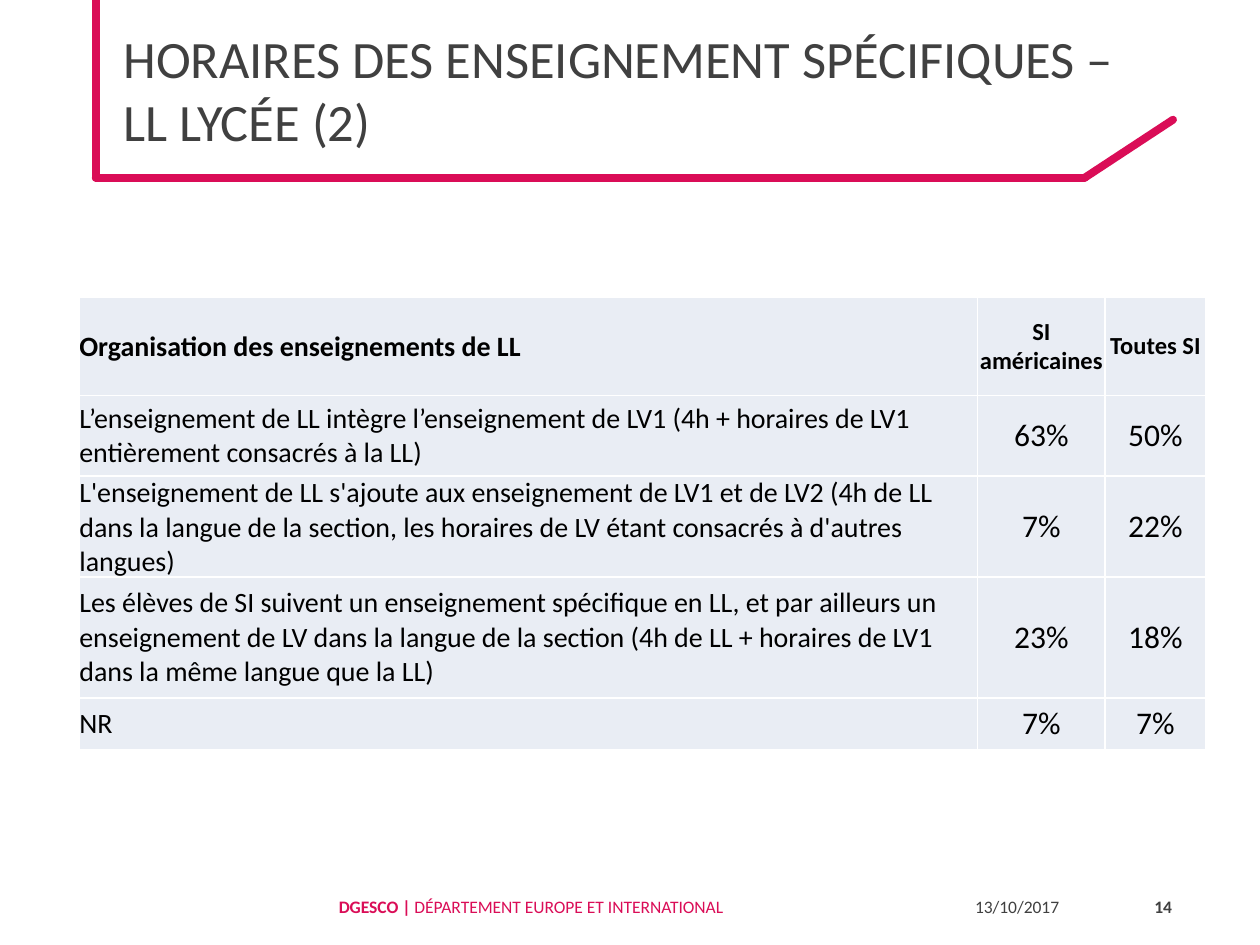
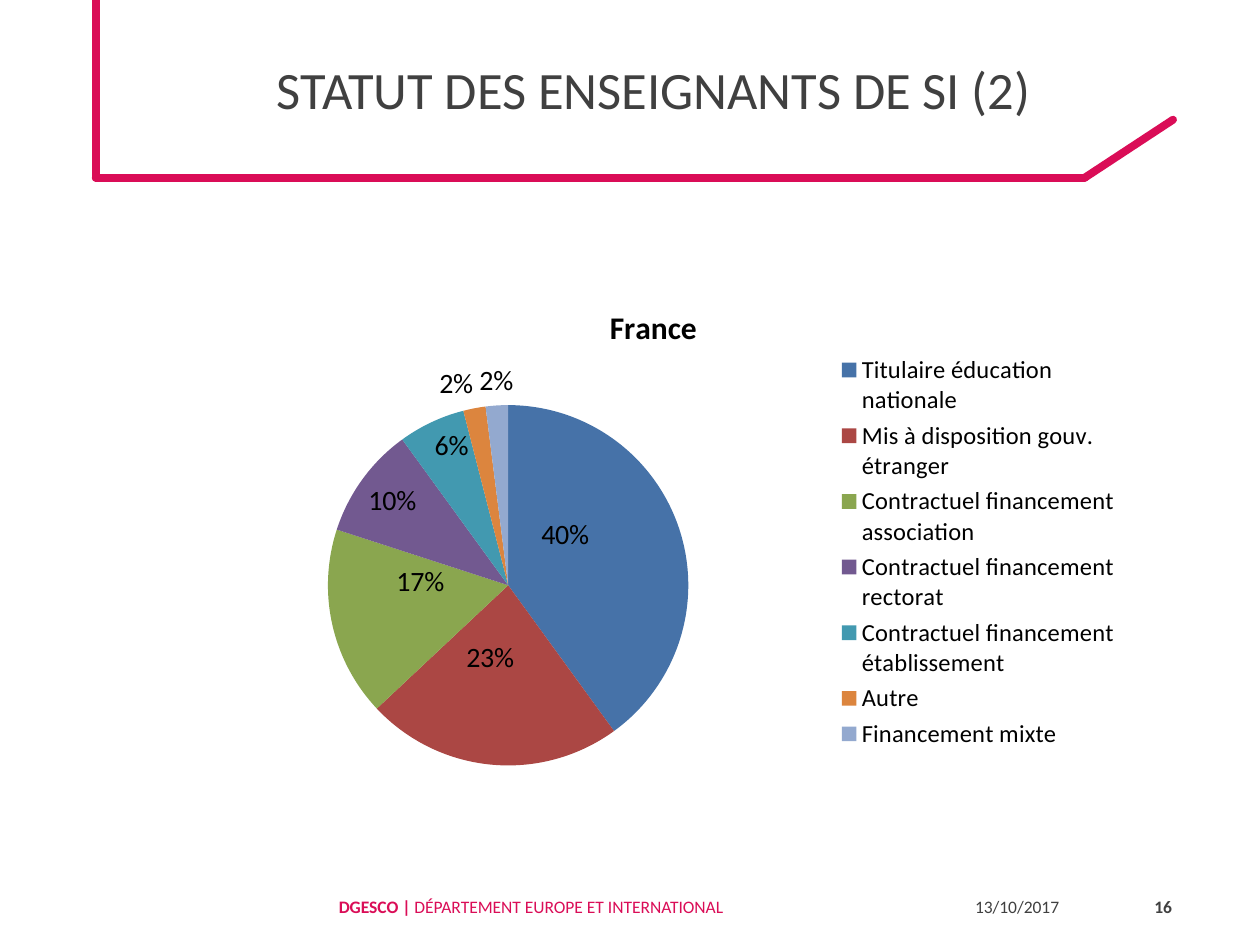
from dataclasses import dataclass

from lxml.etree import SubElement
from pptx import Presentation
from pptx.chart.data import CategoryChartData
from pptx.dml.color import RGBColor
from pptx.enum.chart import XL_CHART_TYPE as ChartType
from pptx.enum.chart import XL_LABEL_POSITION as LabelPosition
from pptx.enum.chart import XL_LEGEND_POSITION as LegendPosition
from pptx.enum.shapes import MSO_CONNECTOR as Connector
from pptx.enum.text import MSO_ANCHOR as Anchor
from pptx.enum.text import PP_ALIGN as Align
from pptx.oxml.ns import qn
from pptx.util import Inches, Pt


@dataclass(frozen=True)
class Theme:
    """Colours, font and type sizes shared by the slides."""

    font: str = "Calibri"
    accent: str = "DA0D57"
    grey: str = "404040"
    black: str = "000000"
    white: str = "FFFFFF"
    cell: str = "E9EDF4"
    slices: tuple = ("4672A8", "AB4744", "8AA64F", "725990", "4299B0", "DC853E", "93A9CF")
    title_size: int = 30
    large_size: int = 18
    text_size: int = 16
    small_size: int = 14
    footer_size: int = 10


THEME = Theme()
TITLE_BOX = (0.88, 0, 8.62, 1.41)
FOOTER_BOX = (2.59, 6.99, 6.81, 0.4)
TABLE_BOX = (0.63, 2.36, 8.94, 3.43)
CHART_BOX = (1.37, 2.16, 7.61, 4.4)
DATE = "13/10/2017"

COLUMN_WIDTHS = (7.13, 1.01, 0.8)
ROW_HEIGHTS = (0.78, 0.64, 0.64, 0.96, 0.41)
TEACHING_ROWS = (
    ("Organisation des enseignements de LL", "SI américaines", "Toutes SI"),
    ("L’enseignement de LL intègre l’enseignement de LV1 (4h + horaires de LV1 "
     "entièrement consacrés à la LL)", "63%", "50%"),
    ("L'enseignement de LL s'ajoute aux enseignement de LV1 et de LV2 (4h de LL dans la "
     "langue de la section, les horaires de LV étant consacrés à d'autres langues)",
     "7%", "22%"),
    ("Les élèves de SI suivent un enseignement spécifique en LL, et par ailleurs un "
     "enseignement de LV dans la langue de la section (4h de LL + horaires de LV1 dans "
     "la même langue que la LL)", "23%", "18%"),
    ("NR", "7%", "7%"),
)
TEACHER_STATUS = {
    "Titulaire éducation nationale": 40,
    "Mis à disposition gouv. étranger": 23,
    "Contractuel financement association": 17,
    "Contractuel financement rectorat": 10,
    "Contractuel financement établissement": 6,
    "Autre": 2,
    "Financement mixte": 2,
}
LABEL_OFFSETS = ((-0.03, -0.04), (-0.01, -0.03), (0, -0.04))


def set_font(font, size, color, bold=False):
    """Apply the theme font with a size, colour and weight."""
    font.name, font.size, font.bold = THEME.font, Pt(size), bold
    font.color.rgb = RGBColor.from_string(color)


def add_line(slide, start, end):
    """Draw one stroke of the title frame."""
    line = slide.shapes.add_connector(
        Connector.STRAIGHT, *(Inches(value) for value in (*start, *end)))
    line.line.color.rgb = RGBColor.from_string(THEME.accent)
    line.line.width = Pt(4.5)
    line.line._get_or_add_ln().set("cap", "rnd")
    SubElement(line._element.spPr, qn("a:effectLst"))


def add_title(slide, box, text, align):
    """Fill the title placeholder and draw the frame around it."""
    left, top, width, height = box
    title = slide.shapes.title
    title.left, title.top, title.width, title.height = map(Inches, box)
    title.text_frame.vertical_anchor = Anchor.MIDDLE
    paragraph = title.text_frame.paragraphs[0]
    paragraph.text = text
    paragraph.alignment = align
    for run in paragraph.runs:
        set_font(run.font, THEME.title_size, THEME.grey)
    edge, bottom = left - 0.12, top + height
    corner = (left + width - 0.89, bottom)
    add_line(slide, (edge, bottom), corner)
    add_line(slide, corner, (left + width - 0.19, bottom - 0.46))
    add_line(slide, (edge, bottom), (edge, top))


def add_footer(slide, box, number):
    """Place the department, date and slide number in a row."""
    left, top, width, height = box
    parts = (
        (5.05, (("DGESCO | ", True), ("DÉPARTEMENT EUROPE ET INTERNATIONAL", False)),
         THEME.accent, Align.LEFT),
        (1.27, ((DATE, False),), THEME.grey, Align.LEFT),
        (width - 6.32, ((str(number), True),), THEME.grey, Align.RIGHT),
    )
    for part_width, texts, color, align in parts:
        shape = slide.shapes.add_textbox(*map(Inches, (left, top, part_width, height)))
        frame = shape.text_frame
        frame.word_wrap = True
        frame.vertical_anchor = Anchor.MIDDLE
        paragraph = frame.paragraphs[0]
        paragraph.alignment = align
        paragraph.line_spacing = Pt(13.2)
        for text, bold in texts:
            run = paragraph.add_run()
            run.text = text
            set_font(run.font, THEME.footer_size, color, bold)
        left += part_width


def format_cell(cell, text, size, bold, align):
    """Write a table cell with its white borders and fill."""
    cell.margin_left = cell.margin_right = cell.margin_top = cell.margin_bottom = 0
    cell.vertical_anchor = Anchor.MIDDLE
    properties = cell._tc.get_or_add_tcPr()
    for side in ("lnL", "lnR", "lnT", "lnB"):
        border = SubElement(properties, qn(f"a:{side}"), w=str(Pt(1)))
        fill = SubElement(border, qn("a:solidFill"))
        SubElement(fill, qn("a:srgbClr"), val=THEME.white)
    cell.fill.solid()
    cell.fill.fore_color.rgb = RGBColor.from_string(THEME.cell)
    paragraph = cell.text_frame.paragraphs[0]
    paragraph.text = text
    paragraph.alignment = align
    set_font(paragraph.runs[0].font, size, THEME.black, bold)


def add_teaching_table(slide, box):
    """Build the table of teaching arrangements."""
    table = slide.shapes.add_table(
        len(ROW_HEIGHTS), len(COLUMN_WIDTHS), *map(Inches, box)).table
    for column, width in zip(table.columns, COLUMN_WIDTHS):
        column.width = Inches(width)
    for row, height in zip(table.rows, ROW_HEIGHTS):
        row.height = Inches(height)
    for row_index, texts in enumerate(TEACHING_ROWS):
        header = row_index == 0
        figure_size = THEME.small_size if header else THEME.large_size
        for column_index, text in enumerate(texts):
            first = column_index == 0
            format_cell(table.cell(row_index, column_index), text,
                        THEME.text_size if first else figure_size, header,
                        Align.LEFT if first else Align.CENTER)


def set_layout(parent, index, inner=False, **fractions):
    """Give a chart part a manual layout in fractions of the chart."""
    for previous in parent.findall(qn("c:layout")):
        parent.remove(previous)
    layout = parent.makeelement(qn("c:layout"))
    parent.insert(index, layout)
    manual = SubElement(layout, qn("c:manualLayout"))
    if inner:
        SubElement(manual, qn("c:layoutTarget"), val="inner")
    if "label" not in parent.tag.lower() and not parent.tag.endswith("dLbl"):
        for mode in ("xMode", "yMode"):
            SubElement(manual, qn(f"c:{mode}"), val="edge")
    for name, value in fractions.items():
        SubElement(manual, qn(f"c:{name}"), val=str(value))


def format_slices(series):
    """Colour the slices and place their percentage labels."""
    labels = series.data_labels
    labels.show_value, labels.show_percentage = False, True
    labels.number_format, labels.number_format_is_linked = "0%", False
    set_font(labels.font, THEME.text_size, THEME.black)
    positions = ([LabelPosition.CENTER] * 3 + [LabelPosition.INSIDE_END] * 2
                 + [LabelPosition.OUTSIDE_END] * 2)
    for index, (color, position) in enumerate(zip(THEME.slices, positions)):
        point = series.points[index]
        point.format.fill.solid()
        point.format.fill.fore_color.rgb = RGBColor.from_string(color)
        set_font(point.data_label.font, THEME.text_size, THEME.black)
        point.data_label.position = position
    for label in series._element.iter(qn("c:dLbl")):
        label.find(qn("c:showVal")).set("val", "0")
        label.find(qn("c:showPercent")).set("val", "1")
    for label, (x, y) in zip(series._element.iter(qn("c:dLbl")), LABEL_OFFSETS):
        set_layout(label, 1, x=x, y=y)


def add_status_chart(slide, box):
    """Build the pie of teacher status with its title and legend."""
    data = CategoryChartData()
    data.categories = list(TEACHER_STATUS)
    data.add_series("France", list(TEACHER_STATUS.values()))
    chart = slide.shapes.add_chart(ChartType.PIE, *map(Inches, box), data).chart
    set_font(chart.font, THEME.footer_size, THEME.black)
    chart.has_title = True
    title = chart.chart_title
    title.text_frame.text = "France"
    set_font(title.text_frame.paragraphs[0].runs[0].font,
             THEME.large_size, THEME.black, True)
    title.include_in_layout = False
    set_layout(title._element, 1, x=0.45, y=0.05)
    chart.has_legend = True
    legend = chart.legend
    legend.position = LegendPosition.RIGHT
    legend.include_in_layout = False
    set_font(legend.font, THEME.small_size, THEME.black)
    set_layout(legend._element, 1, x=0.69, y=0.14, w=0.3, h=0.73)
    plot = chart.plots[0]
    plot.vary_by_categories = True
    plot_area = plot._element.getparent()
    set_layout(plot_area, 0, inner=True, x=0.16, y=0.24, w=0.38, h=0.65)
    format_slices(plot.series[0])


def add_slide(presentation, title, align, number):
    """Add a slide with the shared title frame and footer."""
    slide = presentation.slides.add_slide(presentation.slide_layouts[5])
    add_title(slide, TITLE_BOX, title, align)
    add_footer(slide, FOOTER_BOX, number)
    return slide


def main():
    """Build both slides and save the presentation."""
    presentation = Presentation()
    presentation.slide_width, presentation.slide_height = Inches(10), Inches(7.5)
    hours = add_slide(presentation, "HORAIRES DES ENSEIGNEMENT SPÉCIFIQUES –\vLL LYCÉE (2)",
                      Align.LEFT, 14)
    add_teaching_table(hours, TABLE_BOX)
    status = add_slide(presentation, "STATUT DES ENSEIGNANTS DE SI (2)", Align.CENTER, 16)
    add_status_chart(status, CHART_BOX)
    presentation.save("out.pptx")


if __name__ == "__main__":
    main()
